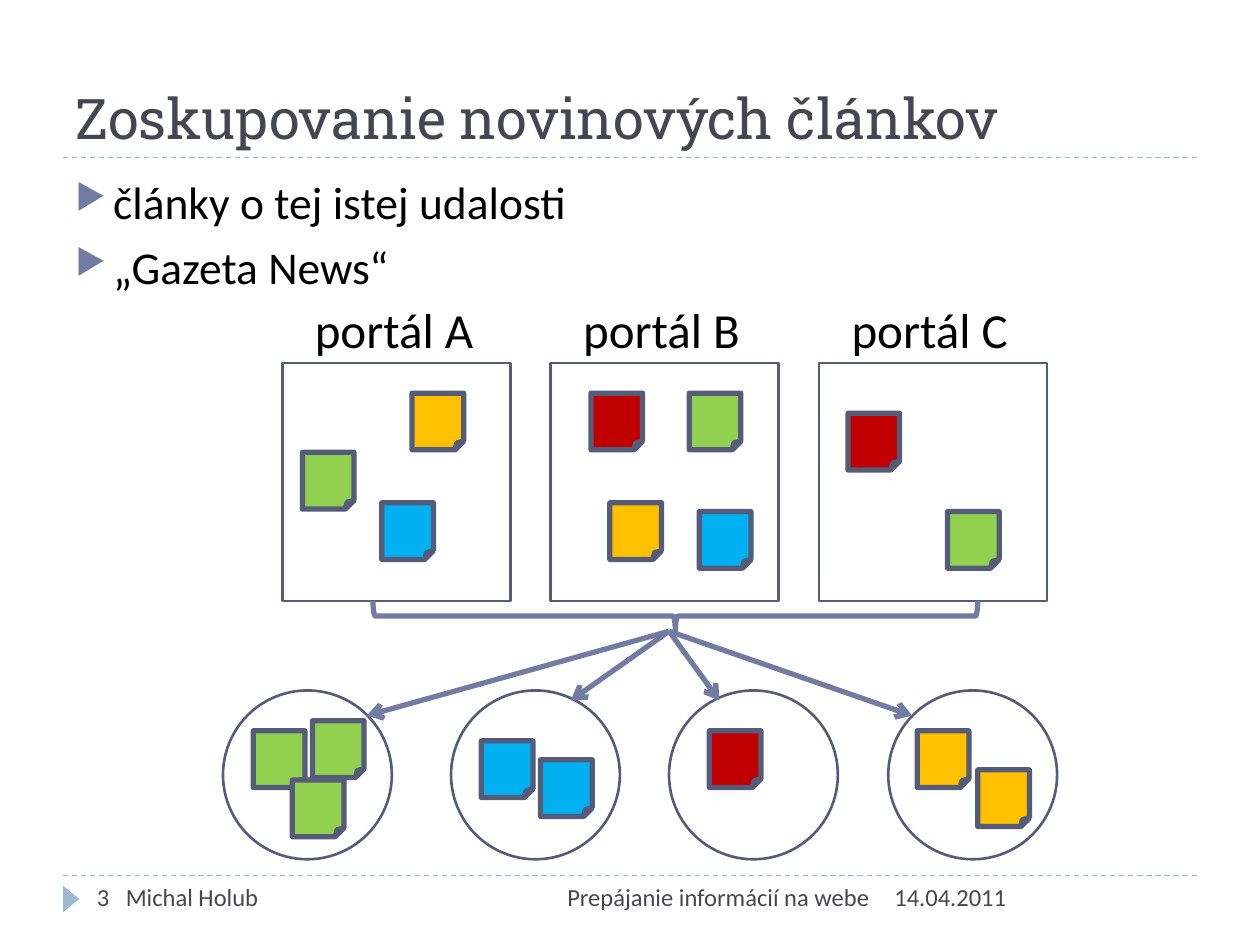
from lxml.etree import SubElement
from pptx import Presentation
from pptx.dml.color import RGBColor
from pptx.enum.dml import MSO_LINE as Dash
from pptx.enum.shapes import MSO_CONNECTOR as Link, MSO_SHAPE as Form
from pptx.enum.text import MSO_ANCHOR as Anchor, MSO_AUTO_SIZE as Fit, PP_ALIGN as Align
from pptx.oxml.ns import qn
from pptx.util import Inches, Pt

HUES = {
    "text": "000000", "title": "464653", "edge": "545C79", "arrow": "727CA3",
    "rule": "9FB8CD", "green": "92D050", "blue": "00B0F0", "red": "C00000",
    "gold": "FFC000",
}


def hue(name):
    return RGBColor.from_string(HUES[name])


class Board:
    """Holds the style and the current slide."""
    font = "Calibri"
    head = "Roboto Slab"

    def __init__(self, slide):
        self.slide = slide
        self.shapes = slide.shapes

    def style(self, frame, size, color, font=None, align=Align.LEFT):
        for para in frame.paragraphs:
            para.alignment = align
            for run in para.runs:
                run.font.size = Pt(size)
                run.font.name = font or self.font
                run.font.color.rgb = hue(color)

    def title(self, text, *box):
        item = self.shapes.title
        item.left, item.top, item.width, item.height = map(Inches, box)
        frame = item.text_frame
        frame.text = text
        frame.vertical_anchor = Anchor.BOTTOM
        self.style(frame, 32, "title", self.head)

    def text(self, text, box, size, color, align=Align.LEFT):
        frame = self.shapes.add_textbox(*map(Inches, box)).text_frame
        frame.word_wrap = True
        frame.text = text
        self.style(frame, size, color, align=align)
        return frame

    def bullets(self, lines, box):
        frame = self.text("\n".join(lines), box, 26, "text")
        for para in frame.paragraphs:
            para.space_before = Pt(6)
            props = para._p.get_or_add_pPr()
            props.set("marL", str(Inches(0.3)))
            props.set("indent", str(-Inches(0.3)))
            tint = SubElement(props, qn("a:buClr"))
            SubElement(tint, qn("a:srgbClr"), val=HUES["arrow"])
            SubElement(props, qn("a:buSzPct"), val="76000")
            SubElement(props, qn("a:buChar"), char="▶")

    def tab(self, frame, place):
        props = frame.paragraphs[0]._p.get_or_add_pPr()
        stops = SubElement(props, qn("a:tabLst"))
        SubElement(stops, qn("a:tab"), pos=str(Inches(place)), algn="l")

    def shape(self, form, box, fill=None, line=None, width=1.5, turn=0):
        item = self.shapes.add_shape(form, *map(Inches, box))
        item.shadow.inherit = False
        item.rotation = turn
        if fill:
            item.fill.solid()
            item.fill.fore_color.rgb = hue(fill)
        else:
            item.fill.background()
        if line:
            item.line.color.rgb = hue(line)
            item.line.width = Pt(width)
        else:
            item.line.fill.background()

    def note(self, color, left, top):
        self.shape(Form.FOLDED_CORNER, (left, top, 0.41, 0.45), color, "edge", 3)

    def line(self, start, end, color, width, dash=None, arrow=False):
        ends = map(Inches, (*start, *end))
        item = self.shapes.add_connector(Link.STRAIGHT, *ends)
        item.line.color.rgb = hue(color)
        item.line.width = Pt(width)
        if dash:
            item.line.dash_style = dash
        if arrow:
            SubElement(item.line._get_or_add_ln(), qn("a:tailEnd"), type="arrow")
        SubElement(item._element.spPr, qn("a:effectLst"))


def main():
    deck = Presentation()
    deck.slide_width, deck.slide_height = Inches(10), Inches(7.5)
    board = Board(deck.slides.add_slide(deck.slide_layouts[5]))

    # Rules and corner mark
    for y in (6.95, 1.25):
        board.line((0.5, y), (9.5, y), "rule", 0.75, Dash.DASH)
    board.shape(Form.ISOSCELES_TRIANGLE, (0.46, 7.07, 0.21, 0.13), "rule", turn=90)

    # Title, footer and bullets
    board.title("Zoskupovanie novinových článkov", 0.5, 0.17, 9, 1.08)
    board.text("14.04.2011", (7, 6.95, 2.5, 0.4), 14, "title")
    board.text("Prepájanie informácií na webe", (3.17, 6.95, 3.83, 0.4), 14,
               "title", Align.RIGHT)
    author = board.text("3\tMichal Holub", (0.67, 6.95, 2.17, 0.4), 14, "title")
    board.tab(author, 0.23)
    board.bullets(["články o tej istej udalosti", "„Gazeta News“"],
                  (0.5, 1.33, 9, 5.4))

    # Portals with their articles
    portals = {
        "A": [("green", 2.4, 3.59), ("gold", 3.27, 3.12), ("blue", 3.03, 3.99)],
        "B": [("green", 5.47, 3.12), ("blue", 5.55, 4.06),
              ("red", 4.69, 3.12), ("gold", 4.84, 3.99)],
        "C": [("green", 7.52, 4.06), ("red", 6.73, 3.28)],
    }
    for i, (name, notes) in enumerate(portals.items()):
        left = 2.24 + 2.13 * i
        board.shape(Form.RECTANGLE, (left, 2.88, 1.81, 1.89), line="edge")
        label = board.text(f"portál {name}", (left + 0.16, 2.33, 1.55, 0.57),
                           28, "text")
        label.auto_size = Fit.SHAPE_TO_FIT_TEXT
        for note in notes:
            board.note(*note)

    # Groups: circle left, arrow tip, colour, article places
    groups = [
        (1.77, (2.91, 5.68), "green", [(2.01, 5.8), (2.48, 5.72), (2.32, 6.19)]),
        (3.58, (4.53, 5.56), "blue", [(3.82, 5.88), (4.29, 6.03)]),
        (5.31, (5.71, 5.56), "red", [(5.63, 5.8)]),
        (7.05, (7.24, 5.68), "gold", [(7.28, 5.8), (7.76, 6.11)]),
    ]
    for left, tip, color, places in groups:
        board.shape(Form.OVAL, (left, 5.48, 1.34, 1.34), line="edge")
        for place in places:
            board.note(color, *place)
        board.line((5.31, 5.01), tip, "arrow", 3, arrow=True)

    # Brace under the portals
    board.shape(Form.RIGHT_BRACE, (5.24, 2.49, 0.24, 4.8), line="arrow",
                width=3, turn=90)

    deck.save("out.pptx")


if __name__ == "__main__":
    main()
